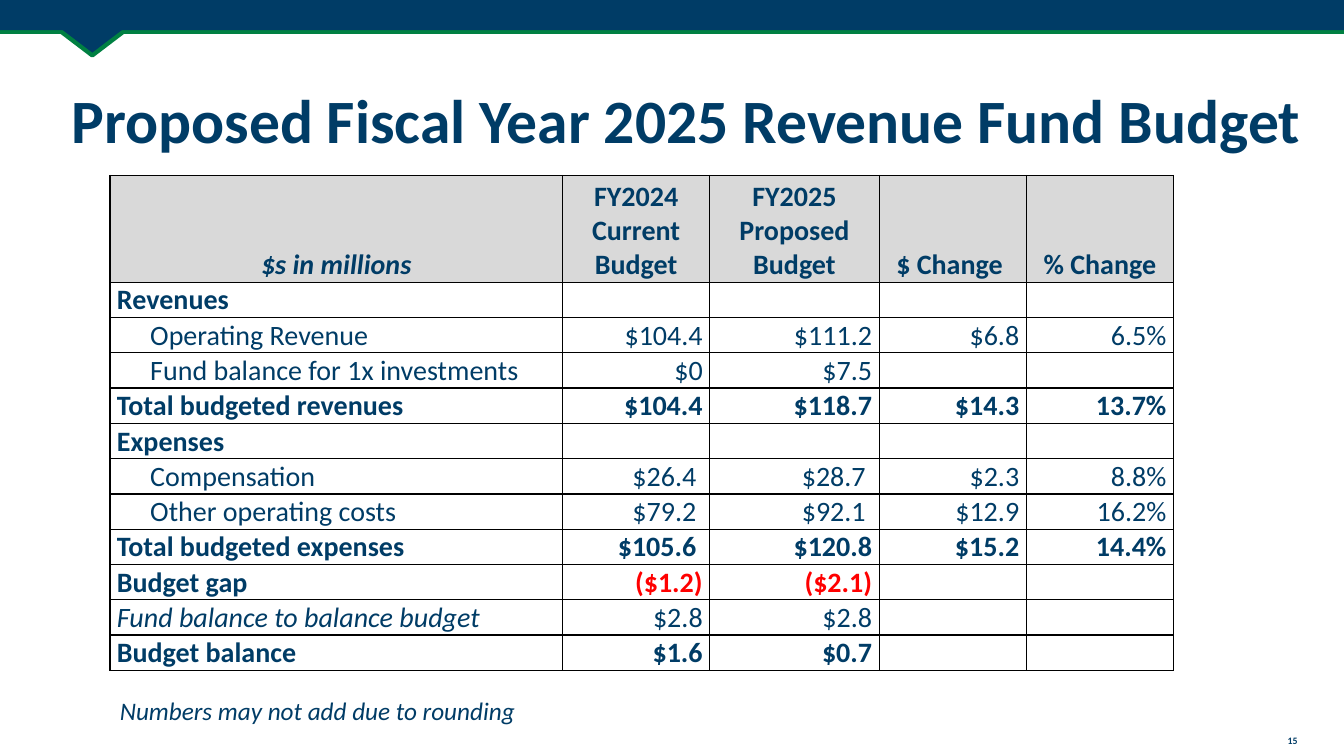
from dataclasses import dataclass

from lxml.etree import SubElement as Sub
from pptx import Presentation
from pptx.dml.color import RGBColor as RGB
from pptx.enum.shapes import MSO_CONNECTOR as Link, MSO_SHAPE as Shape
from pptx.enum.text import MSO_ANCHOR as Anchor, PP_ALIGN as Align
from pptx.oxml.ns import qn
from pptx.util import Inches, Pt


@dataclass
class Theme:
    font: str = "Calibri"
    navy: str = "003C66"
    green: str = "008042"
    grey: str = "D9D9D9"
    red: str = "FF0000"
    black: str = "000000"
    title: int = 44
    body: int = 20
    note: int = 18
    page: int = 7


theme = Theme()
WIDE, HIGH = 13.33, 7.5


def write(frame, text, size=theme.body, color=theme.navy, bold=False,
          italic=False, align=Align.LEFT, space=None):
    frame.word_wrap = True
    para = frame.paragraphs[0]
    para.alignment = align
    para.line_spacing = space
    run = para.add_run()
    run.text = text
    font = run.font
    font.name, font.size = theme.font, Pt(size)
    font.bold, font.italic = bold, italic
    font.color.rgb = RGB.from_string(color)


def edge(cell, side, shown):
    """Draw one side of a cell's border, or clear it."""
    line = Sub(cell._tc.get_or_add_tcPr(), qn("a:ln" + side), w=str(Pt(1)))
    if shown:
        Sub(Sub(line, qn("a:solidFill")), qn("a:srgbClr"), val=theme.black)
    else:
        Sub(line, qn("a:noFill"))


deck = Presentation()
deck.slide_width, deck.slide_height = Inches(WIDE), Inches(HIGH)
slide = deck.slides.add_slide(deck.slide_layouts[6])
shapes = slide.shapes

# Top band: green rule, notch, navy bar
rule = shapes.add_connector(Link.STRAIGHT, 0, Inches(0.32), Inches(WIDE), Inches(0.32))
rule.line.color.rgb = RGB.from_string(theme.green)
rule.line.width = Pt(3)
Sub(rule._element.spPr, qn("a:effectLst"))

for kind, box, turn in [
    (Shape.ISOSCELES_TRIANGLE, (0.39, 0.15, 1.05, 0.4), 180),
    (Shape.RECTANGLE, (0, -0.1, WIDE, 0.4), 0),
]:
    part = shapes.add_shape(kind, *map(Inches, box))
    part.rotation = turn
    part.shadow.inherit = False
    part.fill.solid()
    part.fill.fore_color.rgb = RGB.from_string(theme.navy)
    if turn:
        part.line.color.rgb = RGB.from_string(theme.green)
        part.line.width = Pt(3)
    else:
        part.line.fill.background()

# Title, page number and footnote
for text, box, anchor, form in [
    ("15", (12.57, 7.24, 0.5, 0.22), Anchor.TOP,
     dict(size=theme.page, bold=True, align=Align.CENTER)),
    ("Proposed Fiscal Year 2025 Revenue Fund Budget", (0.61, 0.5, 12.57, 1.45),
     Anchor.MIDDLE, dict(size=theme.title, bold=True, space=0.9)),
    ("Numbers may not add due to rounding", (1.09, 6.85, 5.26, 0.4), Anchor.TOP,
     dict(size=theme.note, italic=True)),
]:
    frame = shapes.add_textbox(*map(Inches, box)).text_frame
    frame.vertical_anchor = anchor
    write(frame, text, **form)

# Budget table: style of row, label, values
rows = [
    ("head", "$s in millions", "FY2024 Current Budget", "FY2025 Proposed Budget",
     "$ Change ", "% Change"),
    ("total", "Revenues"),
    ("item", "Operating Revenue", "$104.4", "$111.2", "$6.8", "6.5%"),
    ("item", "Fund balance for 1x investments", "$0", "$7.5"),
    ("total", "Total budgeted revenues", "$104.4", "$118.7", "$14.3", "13.7%"),
    ("total", "Expenses"),
    ("item", "Compensation", "$26.4 ", "$28.7 ", "$2.3", "8.8%"),
    ("item", "Other operating costs", "$79.2 ", "$92.1 ", "$12.9", "16.2%"),
    ("total", "Total budgeted expenses", "$105.6 ", "$120.8", "$15.2", "14.4%"),
    ("total", "Budget gap", "($1.2)", "($2.1)"),
    ("note", "Fund balance to balance budget", "$2.8", "$2.8"),
    ("total", "Budget balance", "$1.6", "$0.7"),
]
cols = [0.33, 4.16, 1.46, 1.68, 1.46, 1.46]
tall = [1.06] + [0.35] * (len(rows) - 1)

grid = shapes.add_table(len(rows), len(cols), Inches(1.09), Inches(1.74),
                        Inches(sum(cols)), Inches(sum(tall))).table
grid.horz_banding = grid.first_row = False
for col, width in zip(grid.columns, cols):
    col.width = Inches(width)

for r, (style, label, *values) in enumerate(rows):
    grid.rows[r].height = Inches(tall[r])
    head, item = style == "head", style == "item"
    # Items sit past the indent column; other labels span it
    texts = (["", label] if item else [label, ""]) + values
    texts += [""] * (len(cols) - len(texts))
    if not item:
        grid.cell(r, 0).merge(grid.cell(r, 1))

    for c, text in enumerate(texts):
        cell = grid.cell(r, c)
        cell.margin_left = cell.margin_right = Inches(0.07)
        cell.margin_top = cell.margin_bottom = 0
        cell.vertical_anchor = Anchor.BOTTOM
        for side in "LRTB":
            edge(cell, side, not (item and (c, side) in [(0, "R"), (1, "L")]))
        if head:
            cell.fill.solid()
            cell.fill.fore_color.rgb = RGB.from_string(theme.grey)
        else:
            cell.fill.background()
        if not text:
            cell.text_frame.paragraphs[0].font.size = Pt(theme.body)
            continue
        align = Align.CENTER if head else Align.RIGHT if c > 1 else Align.LEFT
        write(cell.text_frame, text, align=align,
              bold=style in ("head", "total"),
              italic=c == 0 and style in ("head", "note"),
              color=theme.red if text.startswith("(") else theme.navy)

deck.save("out.pptx")
